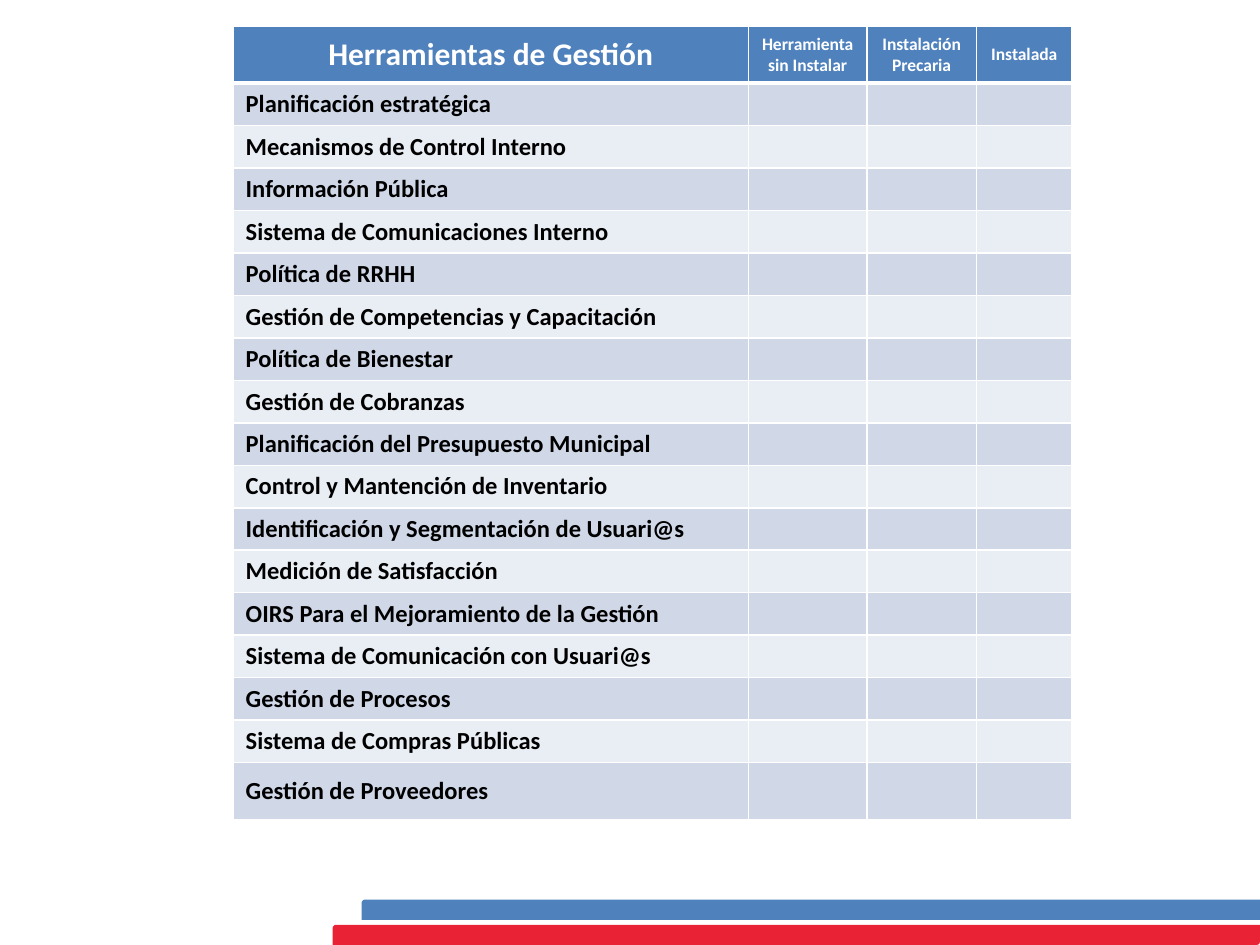
from lxml import etree
from pptx import Presentation
from pptx.dml.color import RGBColor
from pptx.enum.shapes import MSO_SHAPE
from pptx.enum.text import MSO_ANCHOR, PP_ALIGN
from pptx.oxml.ns import qn
from pptx.util import Inches, Pt

BAR_SHAPE = MSO_SHAPE.ROUND_2_DIAG_RECTANGLE
MIDDLE = MSO_ANCHOR.MIDDLE
CENTER, LEFT = PP_ALIGN.CENTER, PP_ALIGN.LEFT

HEADINGS = ["Herramientas de Gestión", "Herramienta sin Instalar",
            "Instalación Precaria", "Instalada"]
TOOLS = [
    "Planificación estratégica",
    "Mecanismos de Control Interno",
    "Información Pública",
    "Sistema de Comunicaciones Interno",
    "Política de RRHH",
    "Gestión de Competencias y Capacitación",
    "Política de Bienestar",
    "Gestión de Cobranzas",
    "Planificación del Presupuesto Municipal",
    "Control y Mantención de Inventario",
    "Identificación y Segmentación de Usuari@s",
    "Medición de Satisfacción",
    "OIRS Para el Mejoramiento de la Gestión",
    "Sistema de Comunicación con Usuari@s",
    "Gestión de Procesos",
    "Sistema de Compras Públicas",
    "Gestión de Proveedores",
]
THEME = {
    "font": "Calibri",
    "blue": "4F81BD", "red": "EA2235", "white": "FFFFFF", "black": "000000",
    "bands": ("D0D8E8", "E9EDF4"),
    "title_size": 18, "heading_size": 10, "body_size": 14,
}
TABLE_LEFT, TABLE_TOP = 1.85, 0.21
COLUMN_WIDTHS = [4.09, 0.94, 0.87, 0.76]
END_ROW_HEIGHT, ROW_HEIGHT = 0.45, 0.31
BAR_WIDTH, BAR_HEIGHT = 7.36, 0.16
BARS = [(2.87, 7.14, "blue"), (2.64, 7.34, "red")]


def paint(fill, color):
    fill.solid()
    fill.fore_color.rgb = RGBColor.from_string(color)


def add_bar(slide, left, top, color):
    bar = slide.shapes.add_shape(BAR_SHAPE, Inches(left), Inches(top),
                                 Inches(BAR_WIDTH), Inches(BAR_HEIGHT))
    bar.shadow.inherit = False
    paint(bar.fill, color)
    bar.line.fill.background()


def set_borders(cell, widths):
    """Draw white borders; widths maps L, R, T and B to points."""
    properties = cell._tc.get_or_add_tcPr()
    for side, width in widths.items():
        line = etree.SubElement(properties, qn(f"a:ln{side}"), w=str(Pt(width)))
        fill = etree.SubElement(line, qn("a:solidFill"))
        etree.SubElement(fill, qn("a:srgbClr"), val=THEME["white"])


def write_cell(cell, text, size, color, alignment):
    cell.vertical_anchor = MIDDLE
    para = cell.text_frame.paragraphs[0]
    para.alignment = alignment
    if not text:
        # Keeps an empty cell from growing to the default text size.
        etree.SubElement(para._p, qn("a:endParaRPr"), sz=str(size * 100))
        return
    span = para.add_run()
    span.text = text
    font_format = {"name": THEME["font"], "size": Pt(size), "bold": True}
    for name, value in font_format.items():
        setattr(span.font, name, value)
    span.font.color.rgb = RGBColor.from_string(color)


def add_tools_table(slide):
    rows = [HEADINGS] + [[tool, "", "", ""] for tool in TOOLS]
    heights = [END_ROW_HEIGHT] + [ROW_HEIGHT] * (len(TOOLS) - 1) + [END_ROW_HEIGHT]
    table = slide.shapes.add_table(
        len(rows), len(HEADINGS), Inches(TABLE_LEFT), Inches(TABLE_TOP),
        Inches(sum(COLUMN_WIDTHS)), Inches(sum(heights))).table
    for column, width in zip(table.columns, COLUMN_WIDTHS):
        column.width = Inches(width)
    for row, height in zip(table.rows, heights):
        row.height = Inches(height)

    for r, texts in enumerate(rows):
        for c, text in enumerate(texts):
            cell = table.cell(r, c)
            set_borders(cell, {"L": 0.5 if c == 3 else 1, "R": 0.5 if c == 2 else 1,
                               "T": 3 if r == 1 else 1, "B": 3 if r == 0 else 1})
            if r == 0:
                size = THEME["title_size" if c == 0 else "heading_size"]
                paint(cell.fill, THEME["blue"])
                write_cell(cell, text, size, THEME["white"], CENTER)
            else:
                paint(cell.fill, THEME["bands"][(r - 1) % 2])
                write_cell(cell, text, THEME["body_size"], THEME["black"], LEFT)


def main():
    deck = Presentation()
    deck.slide_width, deck.slide_height = Inches(10), Inches(7.5)
    slide = deck.slides.add_slide(deck.slide_layouts[6])
    for left, top, color in BARS:
        add_bar(slide, left, top, THEME[color])
    add_tools_table(slide)
    deck.save("out.pptx")


if __name__ == "__main__":
    main()
